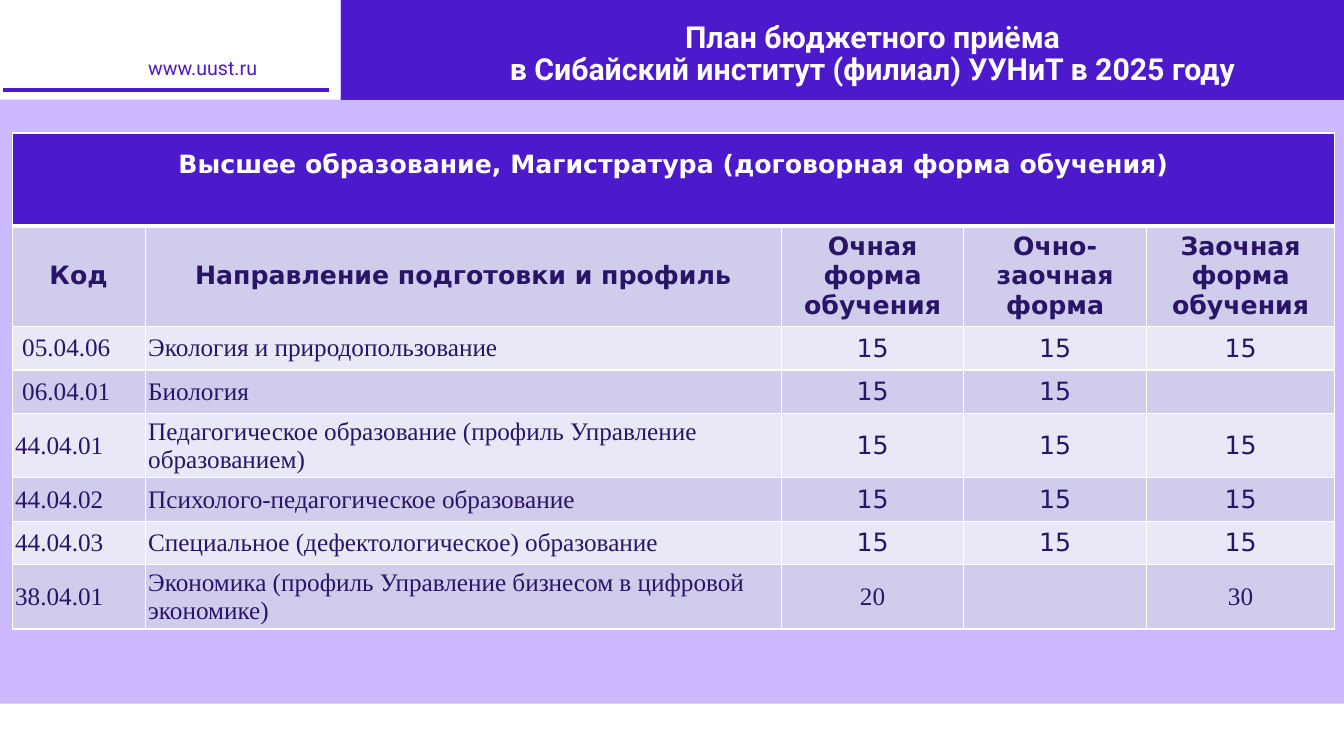
"""Build the admission plan slide with its table of study programmes."""
from lxml import etree
from pptx import Presentation, util as u
from pptx.dml.color import RGBColor
from pptx.enum import shapes, text
from pptx.oxml.ns import qn

VIOLET, WHITE, LILAC, INK = "4D19CC", "FFFFFF", "CBB8FF", "2A1468"
BANDS = ("E9E8F6", "D0CCEC")
SANS, SERIF, BRAND = "DejaVu Sans", "Times New Roman", "Roboto"
WIDTH, HEIGHT = 13.33, 7.5

SITE = ["www.uust.ru"]
TITLE = ["План бюджетного приёма", "в Сибайский институт (филиал) УУНиТ в 2025 году"]
HEADING = "Высшее образование, Магистратура (договорная форма обучения)"
COLUMNS = [
    ("Код", 1.32),
    ("Направление подготовки и профиль", 6.31),
    ("Очная форма обучения", 1.81),
    ("Очно-заочная форма", 1.81),
    ("Заочная форма обучения", 1.87),
]
PROGRAMMES = [
    ("05.04.06", "Экология и природопользование", "15", "15", "15"),
    ("06.04.01", "Биология", "15", "15", ""),
    ("44.04.01", "Педагогическое образование (профиль Управление образованием)", "15", "15", "15"),
    ("44.04.02", "Психолого-педагогическое образование", "15", "15", "15"),
    ("44.04.03", "Специальное (дефектологическое) образование", "15", "15", "15"),
    ("38.04.01", "Экономика (профиль Управление бизнесом в цифровой экономике)", "20", "", "30"),
]
ROW_HEIGHTS = [0.92, 0.89] + [0.43] * len(PROGRAMMES)
BLOCKS = [
    ((0, -0.02, 3.38, 1.01), WHITE, None),
    ((3.38, 0, WIDTH - 3.38, 0.99), VIOLET, None),
    ((0, 0.84, 3.3, 0.1), VIOLET, (WHITE, 4.5)),
    ((0, 6.98, WIDTH, HEIGHT - 6.98), WHITE, None),
]
ROOMY, TIGHT, RAISED = (0.1, 0.05, 0.1, 0.05), (0.03, 0.02, 0.03, 0.02), (0.1, 0.05, 0.1, 0.35)
CENTER, LEFT = text.PP_ALIGN.CENTER, text.PP_ALIGN.LEFT


def color(value):
    """Turn a hex string into a colour."""
    return RGBColor.from_string(value)


def paint(fill, value):
    """Give a fill one solid colour."""
    fill.solid()
    fill.fore_color.rgb = color(value)


def apply(target, values):
    """Set attributes from a dict of format values."""
    for name, value in values.items():
        setattr(target, name, value)


def write(para, lines, face, size, ink, bold=False, align=LEFT):
    """Write lines, parted by line breaks, into one paragraph."""
    para.alignment = align
    for index, line in enumerate(lines):
        if index:
            para.add_line_break()
        span = para.add_run()
        span.text = line
        apply(span.font, {"name": face, "size": u.Pt(size), "bold": bold})
        span.font.color.rgb = color(ink)


def add_block(page, place, fill, outline):
    """Draw one plain rectangle."""
    block = page.shapes.add_shape(shapes.MSO_SHAPE.RECTANGLE, *map(u.Inches, place))
    block.shadow.inherit = False
    paint(block.fill, fill)
    if outline:
        paint(block.line.fill, outline[0])
        block.line.width = u.Pt(outline[1])
    else:
        block.line.fill.background()


def add_label(page, place, lines, **style):
    """Place a text box with tight line spacing."""
    frame = page.shapes.add_textbox(*map(u.Inches, place)).text_frame
    frame.word_wrap = True
    para = frame.paragraphs[0]
    para.line_spacing = 0.9
    write(para, lines, BRAND, ink=style.pop("ink"), **style)


def add_borders(cell, bottom, top):
    """Put white lines on the four sides of a cell."""
    properties = cell._tc.get_or_add_tcPr()
    sides = (("a:lnL", 1), ("a:lnR", 1), ("a:lnT", top), ("a:lnB", bottom))
    for index, (side, points) in enumerate(sides):
        line = etree.Element(qn(side), w=str(u.Pt(points)))
        solid = etree.SubElement(line, qn("a:solidFill"))
        etree.SubElement(solid, qn("a:srgbClr"), val=WHITE)
        properties.insert(index, line)


def cell_style(row, column, value):
    """Return the insets and the text style of a table cell."""
    if row < 2:
        ink = INK if row else WHITE
        return ROOMY if row else RAISED, dict(face=SANS, ink=ink, bold=True, align=CENTER)
    if column > 1:
        return ROOMY, dict(face=SANS if value == "15" else SERIF, ink=INK, align=CENTER)
    wide = column == 0 and row < 4
    return ROOMY if wide else TIGHT, dict(face=SERIF, ink=INK)


def add_plan(page):
    """Add the table of programmes and places."""
    names, widths = zip(*COLUMNS)
    rows = [(HEADING,) + ("",) * (len(names) - 1), names] + PROGRAMMES
    place = map(u.Inches, (0.12, 1.32, sum(widths), sum(ROW_HEIGHTS)))
    table = page.shapes.add_table(len(rows), len(names), *place).table
    apply(table, {"first_row": False, "horz_banding": False})
    for column, width in zip(table.columns, widths):
        column.width = u.Inches(width)
    for row, height in zip(table.rows, ROW_HEIGHTS):
        row.height = u.Inches(height)
    table.cell(0, 0).merge(table.cell(0, len(names) - 1))
    for row, values in enumerate(rows):
        for column, value in enumerate(values):
            cell = table.cell(row, column)
            insets, style = cell_style(row, column, value)
            sides = ("margin_left", "margin_top", "margin_right", "margin_bottom")
            apply(cell, dict(zip(sides, map(u.Inches, insets))))
            cell.vertical_anchor = text.MSO_ANCHOR.MIDDLE
            paint(cell.fill, BANDS[row % 2] if row else VIOLET)
            if row == 1:
                paint(cell.fill, BANDS[1])
            add_borders(cell, bottom=1 if row else 3, top=3 if row == 1 else 1)
            if value:
                write(cell.text_frame.paragraphs[0], [value], size=18, **style)


def main():
    """Build and save the deck."""
    deck = Presentation()
    apply(deck, {"slide_width": u.Inches(WIDTH), "slide_height": u.Inches(HEIGHT)})
    page = deck.slides.add_slide(deck.slide_layouts[6])
    paint(page.background.fill, LILAC)
    for block in BLOCKS:
        add_block(page, *block)
    add_label(page, (1.37, 0.53, 1.56, 0.27), SITE, size=14, ink=VIOLET)
    add_label(page, (4.52, 0.17, 8.27, 0.46), TITLE, size=21.6, ink=WHITE, bold=True, align=CENTER)
    add_plan(page)
    deck.save("out.pptx")


if __name__ == "__main__":
    main()
